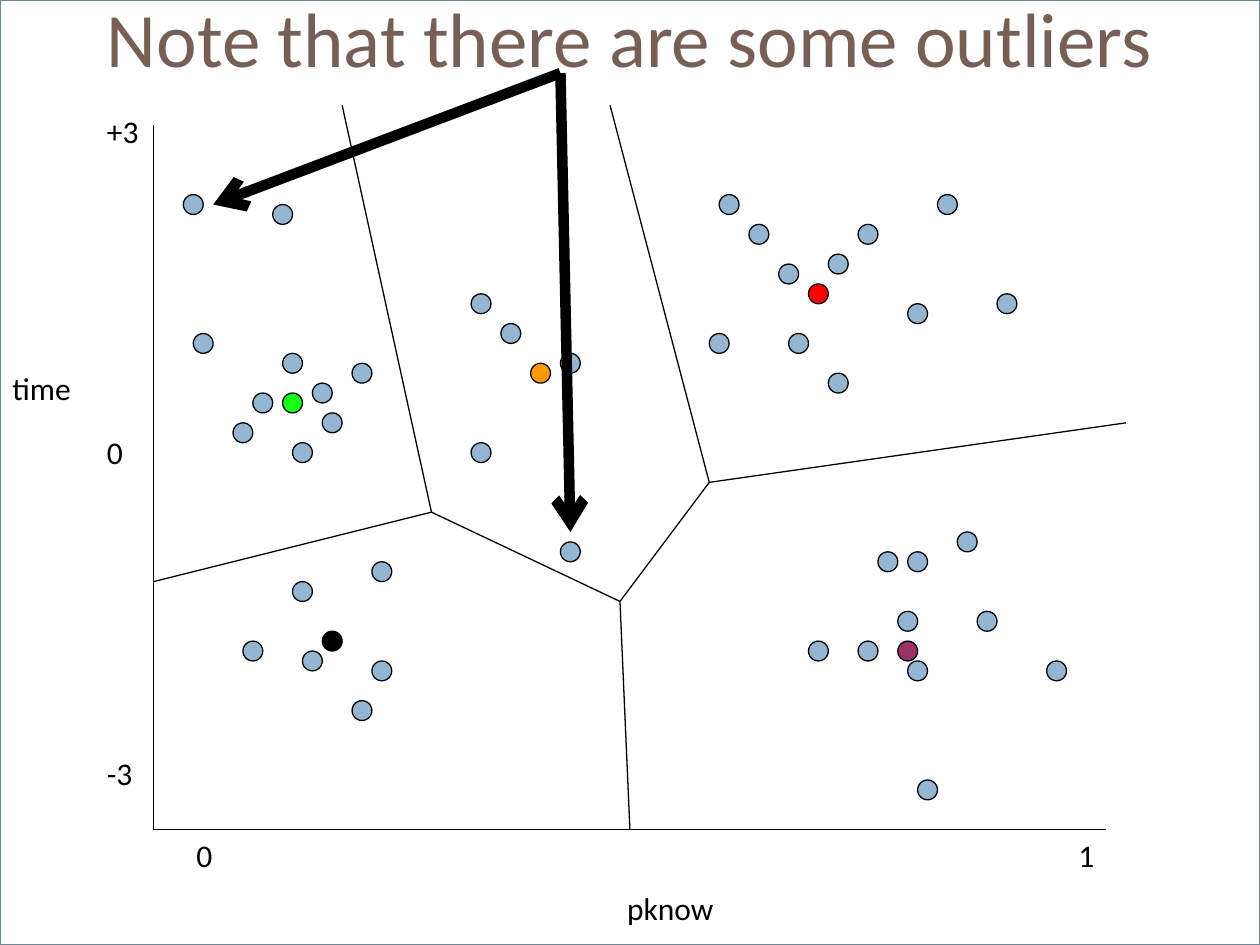
from collections import namedtuple

from lxml.etree import SubElement
from pptx import Presentation
from pptx.dml.color import RGBColor
from pptx.enum.shapes import MSO_CONNECTOR as Connector, MSO_SHAPE as Shape
from pptx.enum.text import MSO_ANCHOR as Anchor, PP_ALIGN as Align
from pptx.oxml.ns import qn
from pptx.util import Pt

Box = namedtuple("Box", "left top width height")

WHITE = RGBColor(0xFF, 0xFF, 0xFF)
BLACK = RGBColor(0, 0, 0)
FRAME = RGBColor(0x6D, 0x87, 0x9B)
BROWN = RGBColor(0x77, 0x5F, 0x55)
BLUE = RGBColor(0x94, 0xB6, 0xD2)
GREEN = RGBColor(0, 0xFF, 0)
ORANGE = RGBColor(0xFF, 0x99, 0)
RED = RGBColor(0xFF, 0, 0)
PURPLE = RGBColor(0x99, 0x33, 0x66)

STEP = 5.67
FIRST_COL, FIRST_ROW = -3, -9
LAST_COL, LAST_ROW = 93, 64

CLUSTERS = {
    "lower right": [(78, 34), (73, 47), (72, 42), (68, 45), (70, 36), (73, 36),
                    (74, 59), (80, 42), (87, 47), (63, 45)],
    "upper right": [(54, 0), (57, 3), (53, 14), (61, 14), (73, 11), (60, 7),
                    (68, 3), (65, 6), (65, 18), (76, 0), (82, 10)],
    "lower left": [(17, 51), (19, 47), (6, 45), (11, 39), (19, 37), (12, 46)],
    "upper left": [(13, 19), (10, 16), (5, 23), (7, 20), (11, 25), (17, 17),
                   (9, 1), (0, 0), (14, 22), (1, 14)],
    "middle": [(29, 25), (38, 35), (38, 16), (29, 10), (32, 13)],
}
CENTROIDS = [((10, 20), GREEN), ((35, 17), ORANGE), ((63, 9), RED),
             ((14, 44), BLACK), ((72, 45), PURPLE)]

LEFT_JOINT, MIDDLE_JOINT, RIGHT_JOINT = (25, 32), (44, 41), (53, 29)
BOUNDARIES = [((-3, 39), LEFT_JOINT), (LEFT_JOINT, (16, -9)),
              (LEFT_JOINT, MIDDLE_JOINT), (RIGHT_JOINT, (43, -9)),
              ((95, 23), RIGHT_JOINT), ((45, LAST_ROW), MIDDLE_JOINT),
              (MIDDLE_JOINT, RIGHT_JOINT)]
AXES = [((FIRST_COL, -7), (FIRST_COL, LAST_ROW)),
        ((FIRST_COL, LAST_ROW), (LAST_COL, LAST_ROW))]
ARROW_START = (38, -12.25)
OUTLIER_TIPS = [(39, 34), (3, 1)]


def grid_point(box, cell):
    """Return the slide position in points of a grid cell in the plot box."""
    col, row = cell
    return box.left + (col - FIRST_COL) * STEP, box.top + (row - FIRST_ROW) * STEP


def add_filled(slide, kind, box, fill, outline, weight):
    """Add a filled and outlined preset shape."""
    shape = slide.shapes.add_shape(kind, *map(Pt, box))
    shape.shadow.inherit = False
    shape.fill.solid()
    shape.fill.fore_color.rgb = fill
    shape.line.color.rgb = outline
    shape.line.width = Pt(weight)
    return shape


def add_line(slide, box, start, end, weight=0.75, arrow=False):
    """Add a black line between two grid cells."""
    ends = (*grid_point(box, start), *grid_point(box, end))
    line = slide.shapes.add_connector(Connector.STRAIGHT, *map(Pt, ends))
    line.line.color.rgb = BLACK
    line.line.width = Pt(weight)
    if arrow:
        SubElement(line.line._get_or_add_ln(), qn("a:tailEnd"), type="arrow")
    SubElement(line._element.spPr, qn("a:effectLst"))


def add_text(slide, box, lines, size=18, color=BLACK, gap=0, anchor=Anchor.TOP):
    """Add a text box with one paragraph per line and return its paragraphs."""
    frame = slide.shapes.add_textbox(*map(Pt, box)).text_frame
    frame.word_wrap = True
    frame.vertical_anchor = anchor
    for index, line in enumerate(lines):
        paragraph = frame.add_paragraph() if index else frame.paragraphs[0]
        if index:
            paragraph.space_before = Pt(gap)
        run = paragraph.add_run()
        run.text = line
        run.font.name = "Calibri"
        run.font.size = Pt(size)
        run.font.color.rgb = color
    return frame.paragraphs


def add_title(slide, box):
    """Add the centred slide title."""
    title, = add_text(slide, box, ["Note that there are some outliers"],
                      44, BROWN, anchor=Anchor.MIDDLE)
    title.alignment = Align.CENTER


def add_dot(slide, box, cell, fill):
    """Add one data dot at a grid cell."""
    dot_box = Box(*grid_point(box, cell), 2 * STEP, 2 * STEP)
    return add_filled(slide, Shape.OVAL, dot_box, fill, BLACK, 0.75)


def add_axis_labels(slide, box):
    """Add the scale values and names of both axes around the plot box."""
    bottom = box.top + box.height
    scale, name = add_text(slide, Box(box.left + 17.3, bottom, 556, 61.2),
                           ["0\t1", "pknow"], gap=9)
    tabs = SubElement(scale._p.get_or_add_pPr(), qn("a:tabLst"))
    SubElement(tabs, qn("a:tab"), pos=str(Pt(504)), algn="l")
    name.alignment = Align.CENTER
    add_text(slide, Box(box.left - 87.8, box.top + 147.2, 60, 29), ["time"])
    add_text(slide, Box(box.left - 33.8, box.top + 0.5, 45.4, 419),
             ["+3", "0", "-3"], gap=161.8)


def add_plot(slide, box):
    """Add the axes, dots, centroids and cluster boundaries."""
    add_axis_labels(slide, box)
    for start, end in AXES:
        add_line(slide, box, start, end)
    for cells in CLUSTERS.values():
        for cell in cells:
            add_dot(slide, box, cell, BLUE)
    for cell, color in CENTROIDS:
        dot = add_dot(slide, box, cell, color)
        if color == GREEN:
            green = dot._element.spPr.find(qn("a:solidFill")).find(qn("a:srgbClr"))
            SubElement(green, qn("a:alpha"), val="90000")
    for start, end in BOUNDARIES:
        add_line(slide, box, start, end)


def add_outlier_arrows(slide, box):
    """Add the heavy arrows from the title to the outliers."""
    for tip in OUTLIER_TIPS:
        add_line(slide, box, ARROW_START, tip, 6, arrow=True)


def main():
    """Build and save the slide."""
    deck = Presentation()
    deck.slide_width, deck.slide_height = Pt(720), Pt(540)
    slide = deck.slides.add_slide(deck.slide_layouts[6])
    plot = Box(87.8, 60.2, (LAST_COL - FIRST_COL) * STEP,
               (LAST_ROW - FIRST_ROW) * STEP)
    add_filled(slide, Shape.RECTANGLE, Box(0, 0, 720, 540), WHITE, FRAME, 1.5)
    add_plot(slide, plot)
    add_title(slide, Box(0, -18, 720, 77.8))
    add_outlier_arrows(slide, plot)
    deck.save("out.pptx")


if __name__ == "__main__":
    main()
